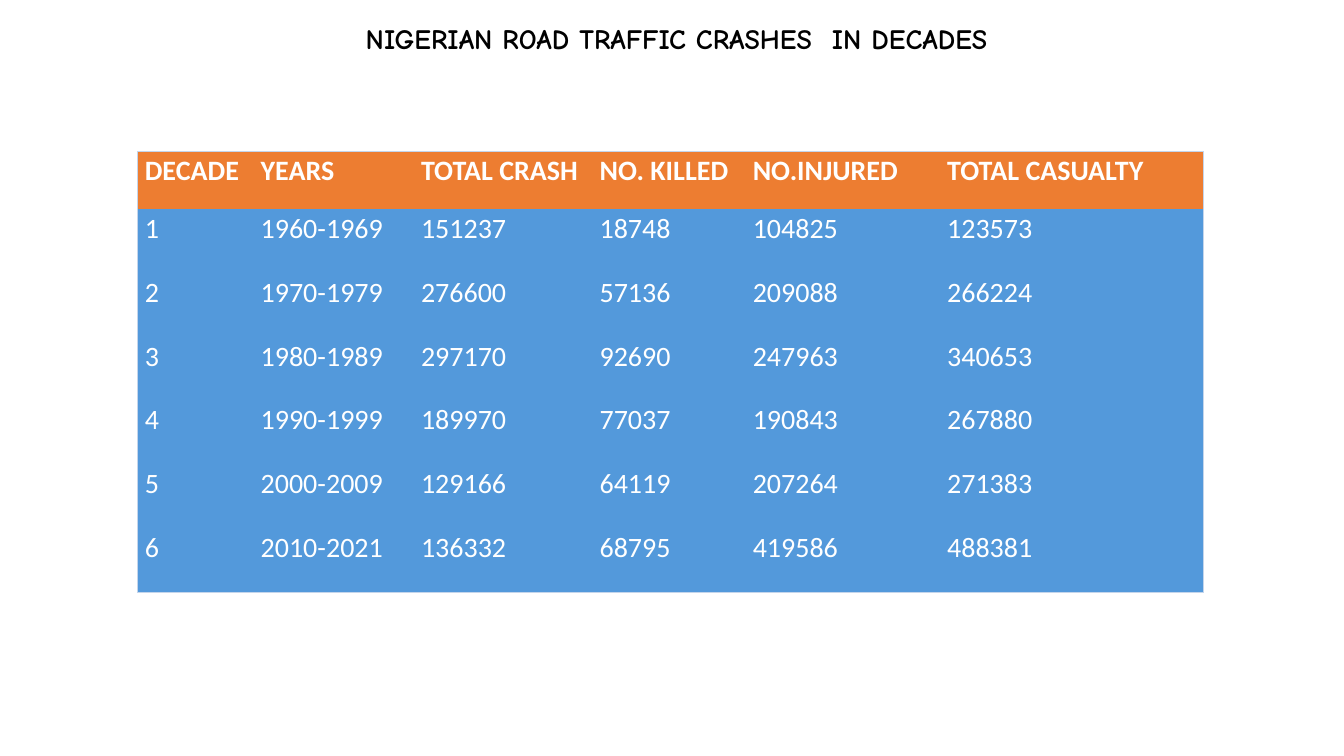
from lxml.etree import SubElement
from pptx import Presentation
from pptx.dml.color import RGBColor
from pptx.enum.text import MSO_ANCHOR, PP_ALIGN
from pptx.oxml.ns import qn
from pptx.util import Cm, Pt

TITLE = "NIGERIAN ROAD TRAFFIC CRASHES  IN DECADES"
CRASHES = [
    ("DECADE", "YEARS", "TOTAL CRASH", "NO. KILLED", "NO.INJURED", "TOTAL CASUALTY"),
    ("1", "1960-1969", "151237", "18748", "104825", "123573"),
    ("2", "1970-1979", "276600", "57136", "209088", "266224"),
    ("3", "1980-1989", "297170", "92690", "247963", "340653"),
    ("4", "1990-1999", "189970", "77037", "190843", "267880"),
    ("5", "2000-2009", "129166", "64119", "207264", "271383"),
    ("6", "2010-2021", "136332", "68795", "419586", "488381"),
]
COLUMN_WIDTHS = (2.92, 4.04, 4.5, 3.86, 4.9, 6.65)
ROW_HEIGHTS = (1.45,) + (1.61,) * (len(CRASHES) - 1)
COLORS = {"title": "000000", "text": "FFFFFF", "header": "ED7D31",
          "body": "5399DB", "edge": "C4D5EB"}
NO_TABLE_STYLE = "{2D5ABB26-0587-4C30-8999-92F81FD0307C}"

TITLE_PARAGRAPH = {"alignment": PP_ALIGN.CENTER, "line_spacing": 0.9, "space_before": Pt(10)}
CELL_PARAGRAPH = {"line_spacing": 1.07}
CELL_MARGINS = {"margin_left": Cm(0.19), "margin_right": Cm(0.19),
                "margin_top": 0, "margin_bottom": 0}


def apply(target, values):
    for name, value in values.items():
        setattr(target, name, value)


def write(text_frame, text, font, color, paragraph_format):
    paragraph = text_frame.paragraphs[0]
    apply(paragraph, paragraph_format)
    run = paragraph.add_run()
    run.text = text
    apply(run.font, font)
    run.font.color.rgb = RGBColor.from_string(COLORS[color])


def add_border(cell_element, side):
    line = SubElement(cell_element.get_or_add_tcPr(), qn(f"a:ln{side}"), w=str(Pt(0.5)))
    fill = SubElement(line, qn("a:solidFill"))
    SubElement(fill, qn("a:srgbClr"), val=COLORS["edge"])


def add_title(slide):
    box = slide.shapes.add_textbox(Cm(0.86), Cm(0.51), Cm(32.39), Cm(1.55))
    apply(box.text_frame, {"word_wrap": True, "vertical_anchor": MSO_ANCHOR.TOP})
    font = {"name": "Comic Neue", "size": Pt(20), "bold": True}
    write(box.text_frame, TITLE, font, "title", TITLE_PARAGRAPH)


def add_crash_table(slide):
    row_count, column_count = len(CRASHES), len(COLUMN_WIDTHS)
    frame = slide.shapes.add_table(row_count, column_count, Cm(3.46), Cm(3.82),
                                   Cm(sum(COLUMN_WIDTHS)), Cm(sum(ROW_HEIGHTS)))
    table = frame.table
    next(frame.element.iter(qn("a:tableStyleId"))).text = NO_TABLE_STYLE
    apply(table, {"first_row": True, "horz_banding": False})
    for column, width in zip(table.columns, COLUMN_WIDTHS):
        column.width = Cm(width)
    for row, height in zip(table.rows, ROW_HEIGHTS):
        row.height = Cm(height)

    cell_elements = frame.element.iter(qn("a:tc"))
    for index, (cell, cell_element) in enumerate(zip(table.iter_cells(), cell_elements)):
        row, column = divmod(index, column_count)
        outer_sides = {"L": column == 0, "R": column == column_count - 1,
                       "T": row == 0, "B": row == row_count - 1}
        for side, is_outer in outer_sides.items():
            if is_outer:
                add_border(cell_element, side)
        apply(cell, CELL_MARGINS)
        cell.fill.solid()
        cell.fill.fore_color.rgb = RGBColor.from_string(COLORS["body" if row else "header"])
        font = {"name": "Calibri", "size": Pt(20), "bold": row == 0}
        write(cell.text_frame, CRASHES[row][column], font, "text", CELL_PARAGRAPH)


def main():
    presentation = Presentation()
    apply(presentation, {"slide_width": Cm(33.87), "slide_height": Cm(19.05)})
    slide = presentation.slides.add_slide(presentation.slide_layouts[6])
    add_title(slide)
    add_crash_table(slide)
    presentation.save("out.pptx")


if __name__ == "__main__":
    main()
